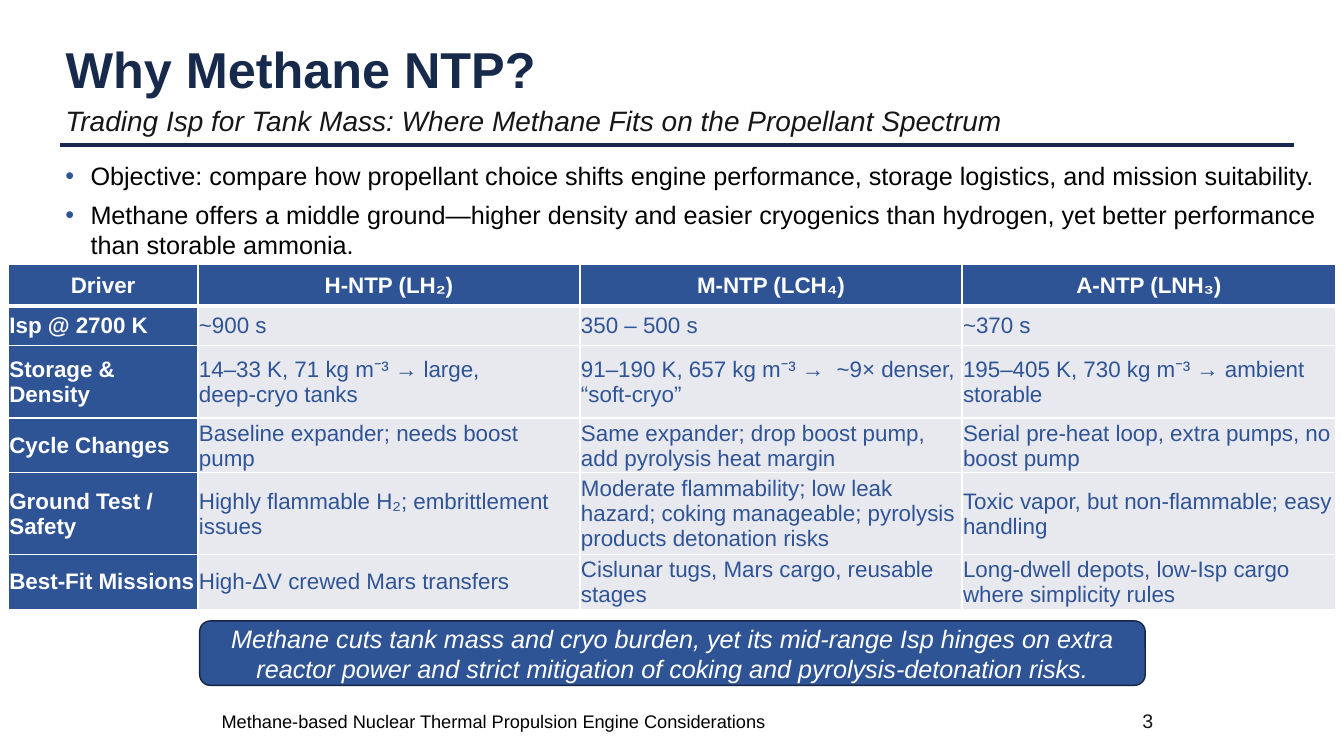
from lxml import etree
from pptx import Presentation
from pptx.dml.color import RGBColor
from pptx.enum import shapes, text
from pptx.oxml.ns import qn
from pptx.util import Pt

# Content
TITLE = "Why Methane NTP?"
SUB = "Trading Isp for Tank Mass: Where Methane Fits on the Propellant Spectrum"
POINTS = [
    "Objective: compare how propellant choice shifts engine performance, storage logistics, and mission suitability.",
    "Methane offers a middle ground—higher density and easier cryogenics than hydrogen, yet better performance than storable ammonia.",
]
TABLE = [
    ["Driver", "H‑NTP (LH₂)", "M‑NTP (LCH₄)", "A‑NTP (LNH₃)"],
    ["Isp @ 2700 K", "~900 s", "350 – 500 s", "~370 s"],
    ["Storage & Density",
     "14–33 K, 71 kg m⁻³ → large, deep‑cryo tanks",
     "91–190 K, 657 kg m⁻³ →  ~9× denser, “soft‑cryo”",
     "195–405 K, 730 kg m⁻³ → ambient storable"],
    ["Cycle Changes",
     "Baseline expander; needs boost pump",
     "Same expander; drop boost pump, add pyrolysis heat margin",
     "Serial pre‑heat loop, extra pumps, no boost pump"],
    ["Ground Test / Safety",
     "Highly flammable H₂; embrittlement issues",
     "Moderate flammability; low leak hazard; coking manageable; pyrolysis products detonation risks",
     "Toxic vapor, but non‑flammable; easy handling"],
    ["Best‑Fit Missions",
     "High‑ΔV crewed Mars transfers",
     "Cislunar tugs, Mars cargo, reusable stages",
     "Long‑dwell depots, low‑Isp cargo where simplicity rules"],
]
CLAIM = ("Methane cuts tank mass and cryo burden, yet its mid‑range Isp hinges on extra "
         "reactor power and strict mitigation of coking and pyrolysis‑detonation risks.")
FOOTER = "Methane-based Nuclear Thermal Propulsion Engine Considerations"
NUMBER = "3"

# Layout, in points
COLS = [135.4, 272.9, 272.9, 267.1]
ROWS = [30, 28, 52, 30, 44.6, 30]
BLUE, NAVY, INK, PALE, WHITE = "2F5496", "182A4B", "181717", "E8E9EF", "FFFFFF"
LEFT, MIDDLE = text.PP_ALIGN.LEFT, text.MSO_ANCHOR.MIDDLE
CENTER, RIGHT = text.PP_ALIGN.CENTER, text.PP_ALIGN.RIGHT


def rgb(code):
    return RGBColor.from_string(code)


def add(parent, tag, **attrs):
    return etree.SubElement(parent, qn(tag), attrs)


def write(frame, lines, size=18, color="000000", bold=False, italic=False,
          align=LEFT, anchor=text.MSO_ANCHOR.TOP, spacing=1.0, gap=0, bullet=False):
    frame.word_wrap = True
    frame.vertical_anchor = anchor
    for i, line in enumerate(lines):
        para = frame.add_paragraph() if i else frame.paragraphs[0]
        para.add_run().text = line
        para.alignment = align
        para.line_spacing = 1.0 if i else spacing
        para.space_before = Pt(gap if i else 0)
        if bullet:
            props = para._p.get_or_add_pPr()
            props.set("marL", str(Pt(18)))
            props.set("indent", str(Pt(-18)))
            add(add(props, "a:buClr"), "a:srgbClr", val=BLUE)
            add(props, "a:buFont", typeface="Arial")
            add(props, "a:buChar", char="•")
        font = para.runs[0].font
        font.name, font.size = "Arial", Pt(size)
        font.bold, font.italic = bold, italic
        font.color.rgb = rgb(color)


def box(x, y, w, h, lines, **style):
    shape = slide.shapes.add_textbox(Pt(x), Pt(y), Pt(w), Pt(h))
    write(shape.text_frame, lines, **style)


def edge(cell, row):
    props = cell._tc.get_or_add_tcPr()
    tops = {0: 1, 1: 3}
    widths = {"L": 1, "R": 1, "T": tops.get(row, 1), "B": tops.get(row + 1, 1)}
    for side, width in widths.items():
        line = add(props, "a:ln" + side, w=str(Pt(width)))
        add(add(line, "a:solidFill"), "a:srgbClr", val=WHITE)


deck = Presentation()
deck.slide_width, deck.slide_height = Pt(960), Pt(540)
slide = deck.slides.add_slide(deck.slide_layouts[5])

# Footer and page number
box(151.2, 501.1, 609, 28.8, [FOOTER], size=13, anchor=MIDDLE)
box(614.9, 500.4, 216, 28.8, [NUMBER], size=14, color=INK, align=RIGHT, anchor=MIDDLE)

# Heading and rule
title = slide.shapes.title
title.left, title.top, title.width, title.height = Pt(39.6), Pt(28.8), Pt(882.7), Pt(44.6)
title.text_frame.auto_size = text.MSO_AUTO_SIZE.NONE
write(title.text_frame, [TITLE], size=36, color=NAVY, bold=True, anchor=MIDDLE, spacing=0.95)
box(39.6, 73.4, 882.7, 28.1, [SUB], size=20, color=INK, italic=True, spacing=0.9)
rule = slide.shapes.add_connector(shapes.MSO_CONNECTOR.STRAIGHT,
                                  Pt(42.9), Pt(103.7), Pt(924.5), Pt(103.7))
rule.line.color.rgb, rule.line.width = rgb("182752"), Pt(3)
add(rule._element.spPr, "a:effectLst")

# Comparison table
grid = slide.shapes.add_table(len(ROWS), len(COLS), Pt(6), Pt(188.6),
                              Pt(sum(COLS)), Pt(sum(ROWS))).table
grid.horz_banding = False
for col, width in zip(grid.columns, COLS):
    col.width = Pt(width)
for r, (height, words) in enumerate(zip(ROWS, TABLE)):
    grid.rows[r].height = Pt(height)
    for c, word in enumerate(words):
        cell, head = grid.cell(r, c), r == 0 or c == 0
        edge(cell, r)
        cell.fill.solid()
        cell.fill.fore_color.rgb = rgb(BLUE if head else PALE)
        cell.margin_left = cell.margin_right = cell.margin_top = Pt(0.72)
        cell.margin_bottom = 0
        cell.vertical_anchor = MIDDLE
        write(cell.text_frame, [word], size=16, color=WHITE if head else BLUE,
              bold=head, align=LEFT if r else CENTER, anchor=None)

# Bullets
box(39.6, 112.3, 920.4, 76.3, POINTS, spacing=0.95, gap=6, bullet=True)

# Takeaway
claim = slide.shapes.add_shape(shapes.MSO_SHAPE.ROUNDED_RECTANGLE,
                               Pt(142.6), Pt(443.5), Pt(675.4), Pt(46.1))
claim.shadow.inherit = False
claim.fill.solid()
claim.fill.fore_color.rgb = rgb(BLUE)
claim.line.color.rgb, claim.line.width = rgb("152542"), Pt(1)
write(claim.text_frame, [CLAIM], color=WHITE, italic=True, align=CENTER, anchor=MIDDLE)

deck.save("out.pptx")
